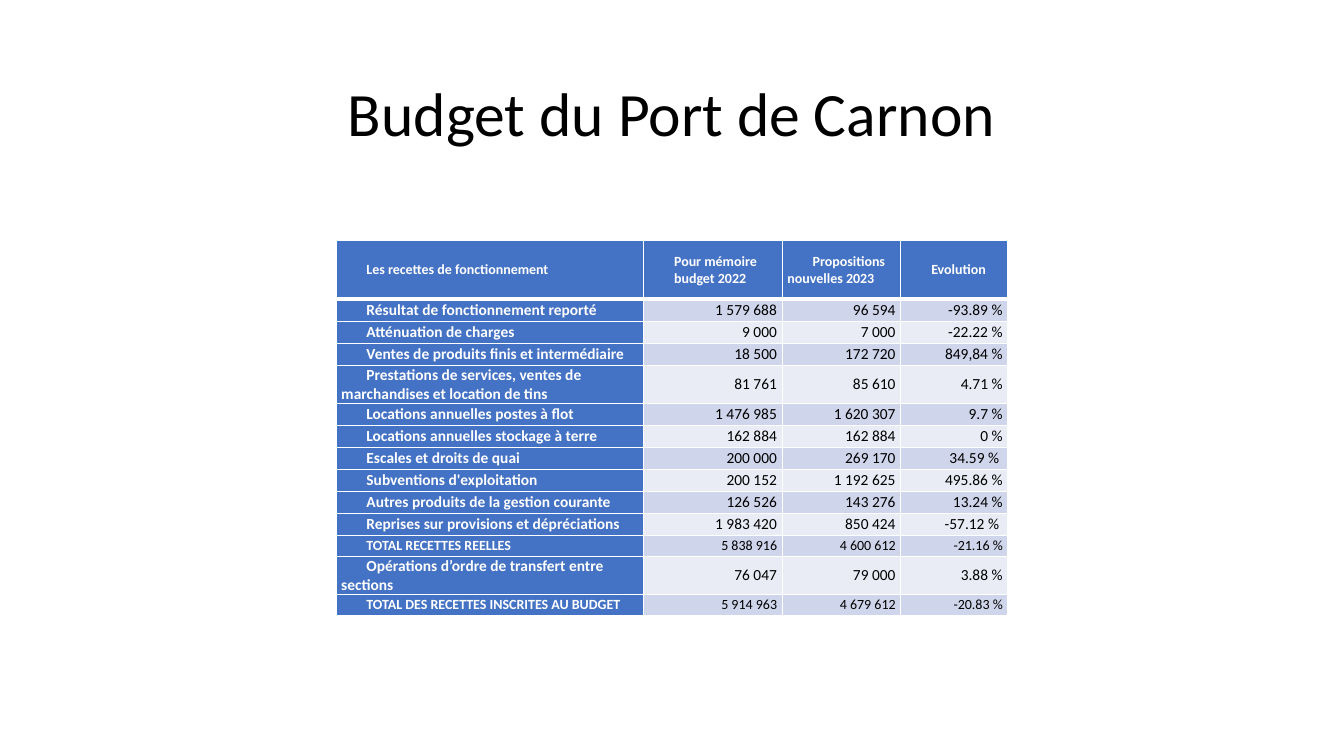
from pptx import Presentation
from pptx import util as u
from pptx.dml.color import RGBColor
from pptx.enum import text
from lxml import etree

PX = 9525
INK = {"head": "4472C4", "odd": "CFD5EA", "even": "E9EBF5", "white": "FFFFFF", "black": "000000"}
NS = "http://schemas.openxmlformats.org/drawingml/2006/main"
COLS = [293, 132, 113, 102]
HEAD = ["Les recettes de fonctionnement", "Pour mémoire\nbudget 2022",
        "Propositions nouvelles 2023", "Evolution"]
ROWS = [
    ["Résultat de fonctionnement reporté", "1 579 688", "96 594", "-93.89 %"],
    ["Atténuation de charges", "9 000", "7 000", "-22.22 %"],
    ["Ventes de produits finis et intermédiaire", "18 500", "172 720", "849,84 %"],
    ["Prestations de services, ventes de marchandises et location de tins",
     "81 761", "85 610", "4.71 %"],
    ["Locations annuelles postes à flot", "1 476 985", "1 620 307", "9.7 %"],
    ["Locations annuelles stockage à terre", "162 884", "162 884", "0 %"],
    ["Escales et droits de quai", "200 000", "269 170", "34.59 % "],
    ["Subventions d'exploitation", "200 152", "1 192 625", "495.86 %"],
    ["Autres produits de la gestion courante", "126 526", "143 276", "13.24 %"],
    ["Reprises sur provisions et dépréciations", "1 983 420", "850 424", "-57.12 % "],
    ["TOTAL RECETTES REELLES", "5 838 916", "4 600 612", "-21.16 %"],
    ["Opérations d’ordre de transfert entre sections", "76 047", "79 000", "3.88 %"],
    ["TOTAL DES RECETTES INSCRITES AU BUDGET", "5 914 963", "4 679 612", "-20.83 %"],
]


def px(n):
    return u.Emu(n * PX)


def put(obj, vals):
    for key, val in vals.items():
        setattr(obj, key, val)


def style(font, size, ink, bold=False):
    put(font, {"name": "Calibri", "size": u.Pt(size), "bold": bold})
    font.color.rgb = RGBColor.from_string(INK[ink])


def edge(cell, side, width):
    line = etree.SubElement(cell._tc.get_or_add_tcPr(), f"{{{NS}}}ln{side}", w=str(u.Pt(width)))
    fill = etree.SubElement(line, f"{{{NS}}}solidFill")
    etree.SubElement(fill, f"{{{NS}}}srgbClr", val=INK["white"])


def title(slide, box, words):
    shape = slide.shapes.title
    put(shape, dict(zip(("left", "top", "width", "height"), map(px, box))))
    frame = shape.text_frame
    put(frame, {"text": words, "word_wrap": True, "vertical_anchor": text.MSO_ANCHOR.MIDDLE})
    para = frame.paragraphs[0]
    put(para, {"alignment": text.PP_ALIGN.CENTER, "line_spacing": 0.9})
    style(para.runs[0].font, 44, "black")


def fill_cell(cell, row, col, words, size):
    label = row == 0 or col == 0
    put(cell, {"text": words, "vertical_anchor": text.MSO_ANCHOR.MIDDLE,
               "margin_left": px(5), "margin_right": px(5),
               "margin_top": 0, "margin_bottom": 0})
    for side in "LRTB":
        thick = (row, side) in ((0, "B"), (1, "T"))
        edge(cell, side, 3 if thick else 1)
    cell.fill.solid()
    tint = "head" if label else ("odd" if row % 2 else "even")
    cell.fill.fore_color.rgb = RGBColor.from_string(INK[tint])
    for para in cell.text_frame.paragraphs:
        para.alignment = text.PP_ALIGN.LEFT if label else text.PP_ALIGN.RIGHT
        put_in = para._p.get_or_add_pPr()
        put_in.set("marL", "0")
        put_in.set("indent", str(px(24)))
        style(para.runs[0].font, size, "white" if label else "black", label)


def budget(slide, box):
    data = [HEAD] + ROWS
    grid = slide.shapes.add_table(len(data), len(COLS), *map(px, box)).table
    for col, wide in zip(grid.columns, COLS):
        col.width = px(wide)
    for i, line in enumerate(data):
        small = i == 0 or line[0].startswith("TOTAL")
        grid.rows[i].height = px(56 if i == 0 else 20 if small else 21)
        for j, words in enumerate(line):
            fill_cell(grid.cell(i, j), i, j, words, 10 if small else 11)


def main():
    deck = Presentation()
    put(deck, {"slide_width": px(1280), "slide_height": px(720)})
    slide = deck.slides.add_slide(deck.slide_layouts[5])
    title(slide, (88, 41, 1104, 139), "Budget du Port de Carnon")
    budget(slide, (320, 229, sum(COLS), 355))
    deck.save("out.pptx")


if __name__ == "__main__":
    main()
